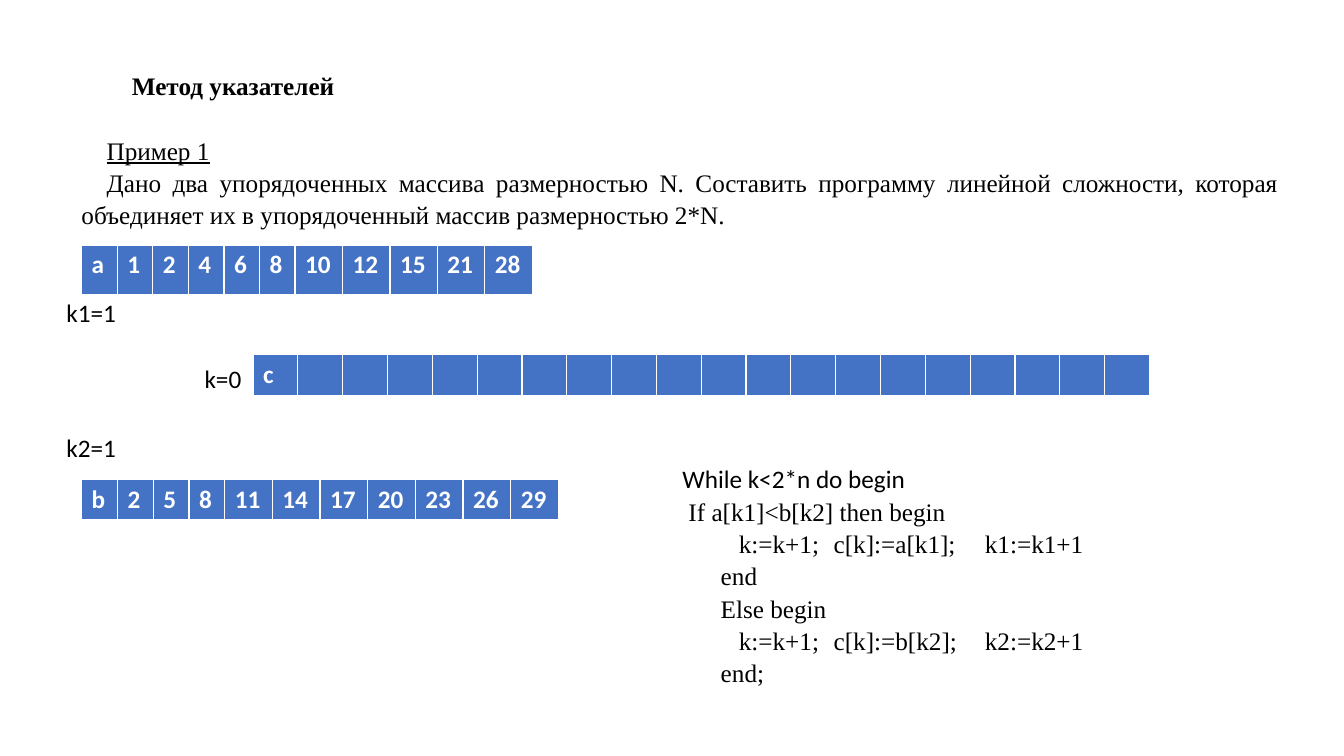
from lxml.etree import SubElement
from pptx import Presentation
from pptx.dml.color import RGBColor
from pptx.enum.text import MSO_AUTO_SIZE, PP_ALIGN
from pptx.oxml.ns import qn
from pptx.util import Pt

EMU_PER_PX = 9144  # 100 px to the inch
COLORS = {"text": "000000", "cell": "4472C4", "light": "FFFFFF"}
SANS, SERIF = "Calibri", "Times New Roman"
BORDERS = {"a:lnL": 1, "a:lnR": 1, "a:lnT": 1, "a:lnB": 3}
STATEMENT_STOPS = (191, 369)


def px(length):
    return round(length * EMU_PER_PX)


def color(name):
    return RGBColor.from_string(COLORS[name])


def style(paragraph, font=SANS, ink="text", bold=False, underline=False):
    for run in paragraph.runs:
        run.font.name = font
        run.font.size = Pt(18)
        run.font.bold = bold
        run.font.underline = underline
        run.font.color.rgb = color(ink)


def add_text(slide, left, top, width, height, lines):
    """Add a text box with one paragraph per line and return its paragraphs."""
    box = slide.shapes.add_textbox(px(left), px(top), px(width), px(height))
    frame = box.text_frame
    frame.word_wrap = True
    frame.auto_size = MSO_AUTO_SIZE.SHAPE_TO_FIT_TEXT
    frame.text = "\n".join(lines)
    for paragraph in frame.paragraphs:
        style(paragraph)
    return frame.paragraphs


def justify(paragraph, first_indent=0, stops=()):
    """Justify with 1.07 line spacing, a first-line indent and tab stops in px."""
    paragraph.alignment = PP_ALIGN.JUSTIFY
    paragraph.line_spacing = 1.07
    properties = paragraph._p.get_or_add_pPr()
    properties.set("marL", "0")
    properties.set("indent", str(px(first_indent)))
    if stops:
        tabs = SubElement(properties, qn("a:tabLst"))
        for stop in stops:
            SubElement(tabs, qn("a:tab"), pos=str(px(stop)), algn="l")


def add_borders(cell):
    properties = cell._tc.get_or_add_tcPr()
    for position, (tag, points) in enumerate(BORDERS.items()):
        line = SubElement(properties, qn(tag), w=str(Pt(points)))
        fill = SubElement(line, qn("a:solidFill"))
        SubElement(fill, qn("a:srgbClr"), val=COLORS["light"])
        properties.insert(position, line)


def add_array(slide, left, top, width, height, values):
    """Add a one-row table whose two-digit columns are a third wider."""
    table = slide.shapes.add_table(
        1, len(values), px(left), px(top), px(width), px(height)).table
    weights = [4 if len(value) > 1 else 3 for value in values]
    for column, weight in zip(table.columns, weights):
        column.width = px(width * weight / sum(weights))
    for cell, value in zip(table.rows[0].cells, values):
        cell.text = value
        style(cell.text_frame.paragraphs[0], ink="light", bold=True)
        cell.fill.solid()
        cell.fill.fore_color.rgb = color("cell")
        add_borders(cell)


def add_task(slide):
    title, example, task = add_text(slide, 71, 63, 1207, 171, [
        "Метод указателей",
        "Пример 1",
        "Дано два упорядоченных массива размерностью N. Составить программу "
        "линейной сложности, которая объединяет их в упорядоченный массив "
        "размерностью 2*N.",
    ])
    justify(title, 50)
    justify(example, 25)
    justify(task, 25)
    style(title, SERIF, bold=True)
    style(example, SERIF, underline=True)
    style(task, SERIF)
    example.space_before = Pt(23)


def add_code(slide):
    code = [
        (0, "While k<2*n do begin"),
        (6, "If a[k1]<b[k2] then begin"),
        (56, "k:=k+1;\tc[k]:=a[k1];\tk1:=k1+1"),
        (38, "end"),
        (38, "Else begin"),
        (56, "k:=k+1;\tc[k]:=b[k2];\tk2:=k2+1"),
        (38, "end;"),
    ]
    lines = add_text(slide, 667, 453, 515, 235, [text for _, text in code])
    for line, (indent, text) in zip(lines, code):
        justify(line, indent, STATEMENT_STOPS if "\t" in text else ())
    for line in lines[1:]:
        style(line, SERIF)


def main():
    presentation = Presentation()
    presentation.slide_width = px(1333)
    presentation.slide_height = px(750)
    slide = presentation.slides.add_slide(presentation.slide_layouts[6])

    add_task(slide)
    add_array(slide, 81, 243, 447, 51, "a 1 2 4 6 8 10 12 15 21 28".split())
    add_array(slide, 81, 476, 473, 41, "b 2 5 8 11 14 17 20 23 26 29".split())
    for left, top, pointer in ((56, 290, "k1=1"), (56, 424, "k2=1"), (193, 356, "k=0")):
        add_text(slide, left, top, 71, 40, [pointer])
    add_array(slide, 251, 352, 889, 42, ["c"] + [""] * 19)
    add_code(slide)
    presentation.save("out.pptx")


if __name__ == "__main__":
    main()
